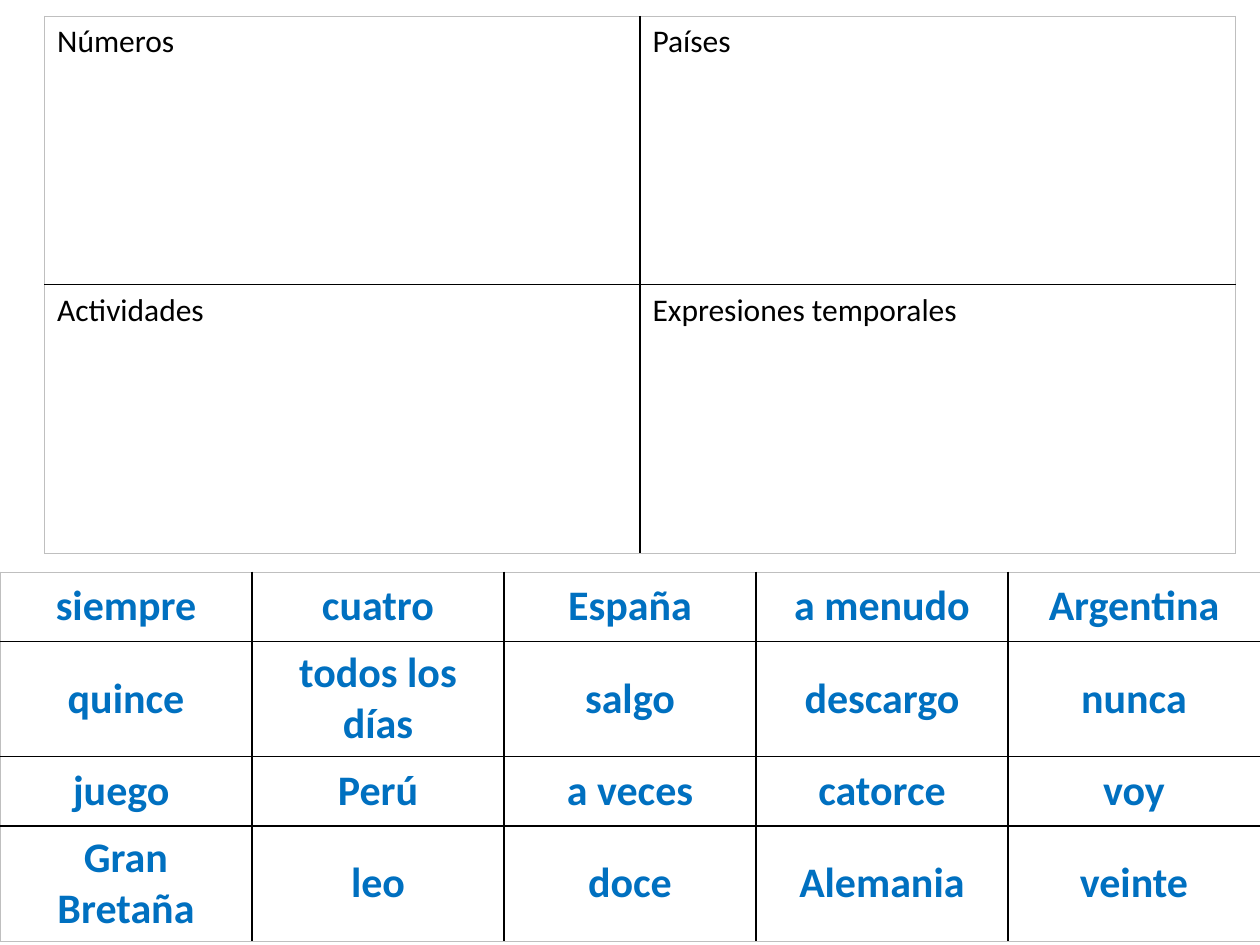
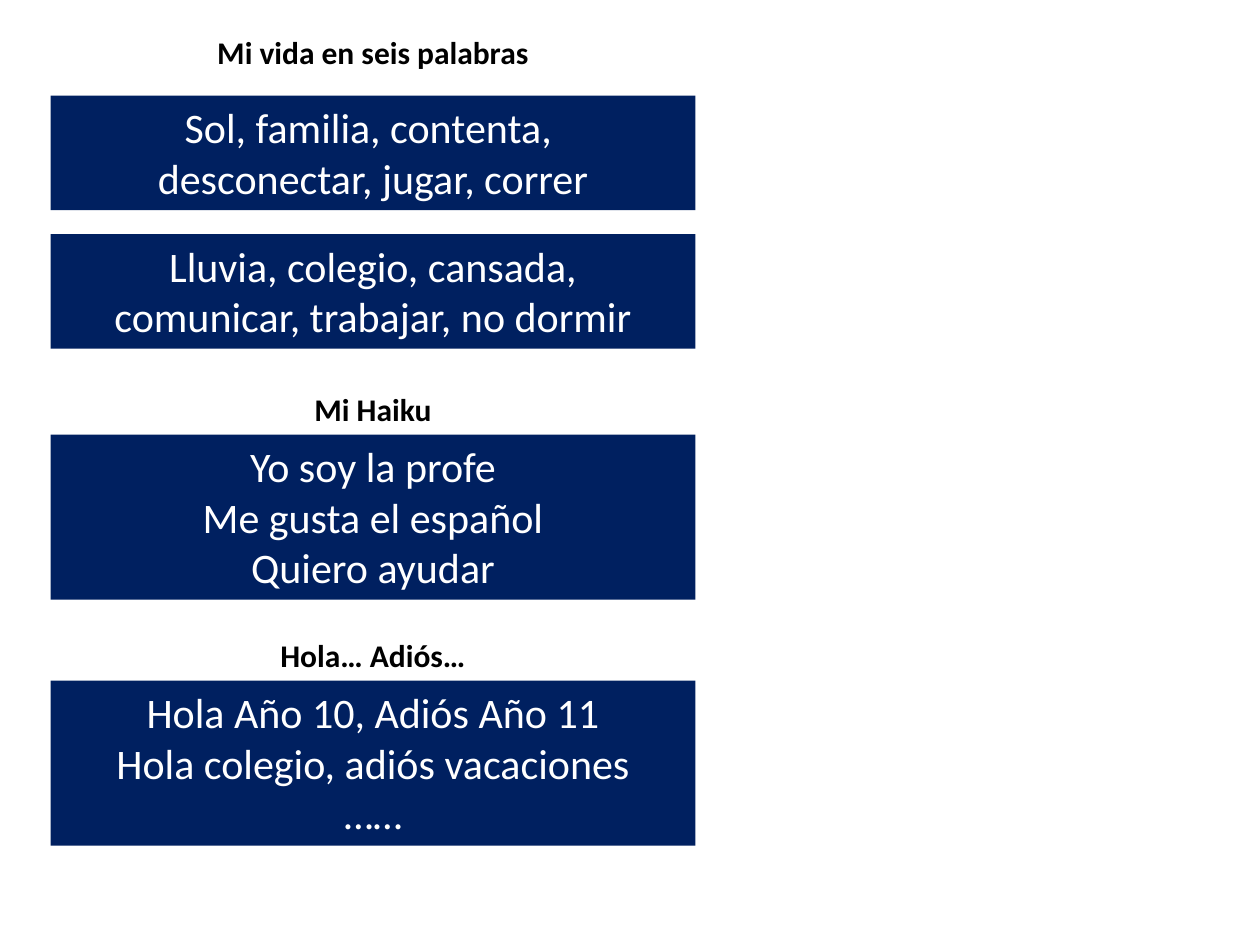
from lxml.etree import SubElement
from pptx import Presentation
from pptx.dml.color import RGBColor
from pptx.enum.shapes import MSO_SHAPE
from pptx.enum.text import MSO_ANCHOR, MSO_AUTO_SIZE, PP_ALIGN
from pptx.oxml.ns import qn
from pptx.util import Cm, Pt

BLACK = RGBColor(0, 0, 0)
WHITE = RGBColor(255, 255, 255)
NAVY = RGBColor(0x00, 0x20, 0x60)
BLUE = RGBColor(0x00, 0x70, 0xC0)
GREY = RGBColor(0xBF, 0xBF, 0xBF)

LABEL = {"size": Pt(18), "bold": False, "color": BLACK}
WORD = {"size": Pt(24), "bold": True, "color": BLUE}
HEADING = {"size": Pt(18), "bold": True, "color": BLACK}
POEM = {"size": Pt(24), "bold": False, "color": WHITE}

TITLE_ONLY, BLANK = 5, 6
POEM_LEFT, POEM_WIDTH = 1.02, 13
HEADING_HEIGHT = 1.02

CATEGORIES = [["Números", "Países"], ["Actividades", "Expresiones temporales"]]
WORDS = [
    ["siempre", "cuatro", "España", "a menudo", "Argentina"],
    ["quince", "todos los días", "salgo", "descargo", "nunca"],
    ["juego ", "Perú", "a veces", "catorce", "voy"],
    ["Gran Bretaña", "leo", "doce", "Alemania", "veinte"],
]
HEADINGS = [(7.73, "Mi Haiku"), (12.7, "Hola… Adiós…")]
POEMS = [
    (1.93, 2.31, "Sol, familia, contenta, \ndesconectar, jugar, correr"),
    (4.72, 2.31, "Lluvia, colegio, cansada,\ncomunicar, trabajar, no dormir"),
    (8.76, 3.33, "Yo soy la profe\nMe gusta el español\nQuiero ayudar"),
    (13.72, 3.33, "Hola Año 10, Adiós Año 11\nHola colegio, adiós vacaciones\n……"),
]


class Worksheet:
    font_name = "Calibri"

    def __init__(self):
        self.deck = Presentation()
        self.deck.slide_width, self.deck.slide_height = Cm(25.4), Cm(19.05)
        self.page = None

    def add_page(self, layout):
        self.page = self.deck.slides.add_slide(self.deck.slide_layouts[layout])

    def set_text(self, frame, text, style, align):
        para = frame.paragraphs[0]
        para.text = text
        para.alignment = align
        for span in para.runs:
            span.font.name = self.font_name
            for name, value in style.items():
                if name == "color":
                    span.font.color.rgb = value
                else:
                    setattr(span.font, name, value)

    def fill_box(self, box, text, style):
        """Put centred text in a box that grows with it."""
        layout = {"word_wrap": True, "auto_size": MSO_AUTO_SIZE.SHAPE_TO_FIT_TEXT,
                  "vertical_anchor": MSO_ANCHOR.TOP}
        for name, value in layout.items():
            setattr(box.text_frame, name, value)
        self.set_text(box.text_frame, text, style, PP_ALIGN.CENTER)

    def title(self, top, text):
        box = self.page.shapes.title
        place = {"left": POEM_LEFT, "top": top, "width": POEM_WIDTH, "height": HEADING_HEIGHT}
        for name, value in place.items():
            setattr(box, name, Cm(value))
        self.fill_box(box, text, HEADING)

    def heading(self, top, text):
        box = self.page.shapes.add_textbox(
            Cm(POEM_LEFT), Cm(top), Cm(POEM_WIDTH), Cm(HEADING_HEIGHT))
        self.fill_box(box, text, HEADING)

    def poem(self, top, height, text):
        box = self.page.shapes.add_shape(
            MSO_SHAPE.RECTANGLE, Cm(POEM_LEFT), Cm(top), Cm(POEM_WIDTH), Cm(height))
        box.shadow.inherit = False
        box.fill.solid()
        box.fill.fore_color.rgb = NAVY
        box.line.fill.background()
        self.fill_box(box, text, POEM)

    def border(self, cell, side, outer):
        line = SubElement(cell._tc.get_or_add_tcPr(), qn(f"a:ln{side}"),
                          w=str(Pt(0.5 if outer else 1)))
        fill = SubElement(line, qn("a:solidFill"))
        SubElement(fill, qn("a:srgbClr"), val=str(GREY if outer else BLACK))

    def table(self, left, top, column_width, row_heights, rows, style, align, anchor):
        row_count, column_count = len(rows), len(rows[0])
        frame = self.page.shapes.add_table(
            row_count, column_count, Cm(left), Cm(top),
            Cm(column_width * column_count), Cm(sum(row_heights)))
        table = frame.table
        table.first_row = table.horz_banding = False
        for column in table.columns:
            column.width = Cm(column_width)
        for r, (texts, height) in enumerate(zip(rows, row_heights)):
            table.rows[r].height = Cm(height)
            for c, text in enumerate(texts):
                cell = table.cell(r, c)
                edges = {"L": c == 0, "R": c == column_count - 1,
                         "T": r == 0, "B": r == row_count - 1}
                for side, outer in edges.items():
                    self.border(cell, side, outer)
                cell.fill.background()
                cell.vertical_anchor = anchor
                self.set_text(cell.text_frame, text, style, align)


def main():
    sheet = Worksheet()

    sheet.add_page(BLANK)
    sheet.table(0.9, 0.33, 12, [5.41, 5.41], CATEGORIES,
                LABEL, PP_ALIGN.LEFT, MSO_ANCHOR.TOP)
    sheet.table(0, 11.53, 5.08, [1.4, 2.29, 1.4, 2.29], WORDS,
                WORD, PP_ALIGN.CENTER, MSO_ANCHOR.MIDDLE)

    sheet.add_page(TITLE_ONLY)
    sheet.title(0.53, "Mi vida en seis palabras")
    for top, text in HEADINGS:
        sheet.heading(top, text)
    for top, height, text in POEMS:
        sheet.poem(top, height, text)

    sheet.deck.save("out.pptx")


if __name__ == "__main__":
    main()
